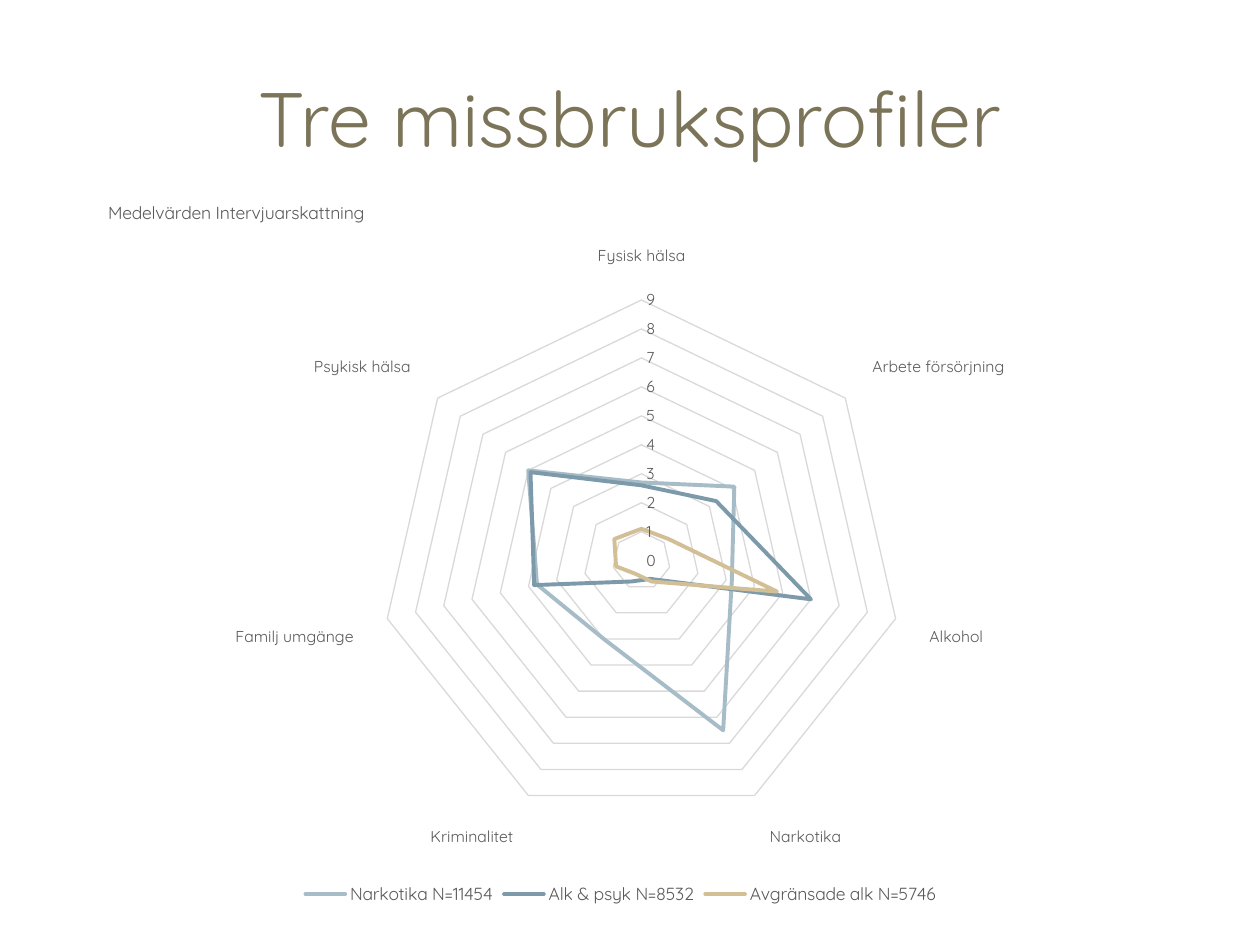
from lxml import etree
from pptx import Presentation
from pptx.chart.data import CategoryChartData
from pptx.dml.color import RGBColor
from pptx.enum.chart import XL_CHART_TYPE, XL_LEGEND_POSITION, XL_TICK_MARK
from pptx.enum.text import MSO_ANCHOR, PP_ALIGN
from pptx.oxml.ns import qn
from pptx.util import Inches, Pt

RADAR = XL_CHART_TYPE.RADAR
BOTTOM = XL_LEGEND_POSITION.BOTTOM
NO_TICK = XL_TICK_MARK.NONE
MIDDLE = MSO_ANCHOR.MIDDLE
CENTER = PP_ALIGN.CENTER

FONT = "Quicksand"
OLIVE = RGBColor(0x7B, 0x74, 0x58)
GRAY = RGBColor(0x59, 0x59, 0x59)
GRID = RGBColor(0xD9, 0xD9, 0xD9)
LIGHT_BLUE = RGBColor(0xA6, 0xBC, 0xC6)
BLUE = RGBColor(0x7D, 0x9A, 0xAA)
SAND = RGBColor(0xD3, 0xBF, 0x96)

AREAS = ["Fysisk hälsa", "Arbete försörjning", "Alkohol", "Narkotika",
         "Kriminalitet", "Familj umgänge", "Psykisk hälsa"]
PROFILES = [
    ("Narkotika N=11454", LIGHT_BLUE, [2.7, 4.1, 3.2, 6.5, 3, 3.7, 5]),
    ("Alk & psyk N=8532", BLUE, [2.6, 3.3, 6, 0.7, 0.8, 3.8, 4.9]),
    ("Avgränsade alk N=5746", SAND, [1.1, 1.2, 4.8, 0.8, 0.5, 0.9, 1.2]),
]


def manual_layout(**places):
    layout = etree.Element(qn("c:layout"))
    manual = etree.SubElement(layout, qn("c:manualLayout"))
    for tag, value in places.items():
        etree.SubElement(manual, qn(f"c:{tag}")).set("val", str(value))
    return layout


class SlideBuilder:
    def __init__(self, prs):
        self.s = prs.slides.add_slide(prs.slide_layouts[6])

    def style_font(self, font, size, color=GRAY):
        font.name = FONT
        font.size = Pt(size)
        font.bold = False
        font.color.rgb = color

    def style_line(self, line, color, width):
        line.color.rgb = color
        line.width = Pt(width)

    def title(self, text, x, y, w, h):
        sp = self.s.shapes.add_textbox(Inches(x), Inches(y), Inches(w), Inches(h))
        tf = sp.text_frame
        tf.word_wrap = True
        tf.vertical_anchor = MIDDLE
        tf.text = text
        p = tf.paragraphs[0]
        p.alignment = CENTER
        self.style_font(p.runs[0].font, 44, OLIVE)

    def axis(self, axis):
        axis.major_tick_mark = NO_TICK
        axis.minor_tick_mark = NO_TICK
        axis.has_major_gridlines = True
        self.style_line(axis.major_gridlines.format.line, GRID, 0.75)
        self.style_font(axis.tick_labels.font, 9)

    def chart_title(self, chart, text):
        chart.has_title = True
        title = chart.chart_title
        title.text_frame.text = text
        self.style_font(title.text_frame.paragraphs[0].runs[0].font, 10)
        title.include_in_layout = False
        element = title._element
        for old in element.findall(qn("c:layout")):
            element.remove(old)
        element.find(qn("c:tx")).addnext(
            manual_layout(xMode="edge", yMode="edge", x=0.01, y=0.03))

    def radar(self, text, x, y, w, h):
        data = CategoryChartData(number_format="General")
        data.categories = AREAS
        for name, _, values in PROFILES:
            data.add_series(name, values)
        chart = self.s.shapes.add_chart(
            RADAR, Inches(x), Inches(y), Inches(w), Inches(h), data).chart
        self.style_font(chart.font, 10)
        self.chart_title(chart, text)

        self.axis(chart.category_axis)
        self.style_line(chart.category_axis.format.line, GRID, 0.75)
        axis = chart.value_axis
        self.axis(axis)
        axis.format.line.fill.background()
        axis.minimum_scale = 0
        axis.maximum_scale = 9
        axis.major_unit = 1
        axis.tick_labels.number_format = "0"
        axis.tick_labels.number_format_is_linked = False

        chart.has_legend = True
        chart.legend.position = BOTTOM
        chart.legend.include_in_layout = False
        self.style_font(chart.legend.font, 10)

        for series, (_, color, _) in zip(chart.plots[0].series, PROFILES):
            series.smooth = False
            line = series.format.line
            self.style_line(line, color, 2.25)
            ln = series._element.spPr.find(qn("a:ln"))
            ln.set("cap", "rnd")
            etree.SubElement(ln, qn("a:round"))

        plot_area = chart._chartSpace.find(".//" + qn("c:plotArea"))
        for old in plot_area.findall(qn("c:layout")):
            plot_area.remove(old)
        plot_area.insert(0, manual_layout(
            layoutTarget="inner", xMode="edge", yMode="edge",
            x=0.27, y=0.17, w=0.5, h=0.71))


def main():
    prs = Presentation()
    prs.slide_width = Inches(10)
    prs.slide_height = Inches(7.5)
    slide = SlideBuilder(prs)
    slide.title("Tre missbruksprofiler", 0.5, 0.3, 9, 1.25)
    slide.radar("Medelvärden Intervjuarskattning", 0.75, 1.39, 8.35, 5.83)
    prs.save("out.pptx")


if __name__ == "__main__":
    main()
